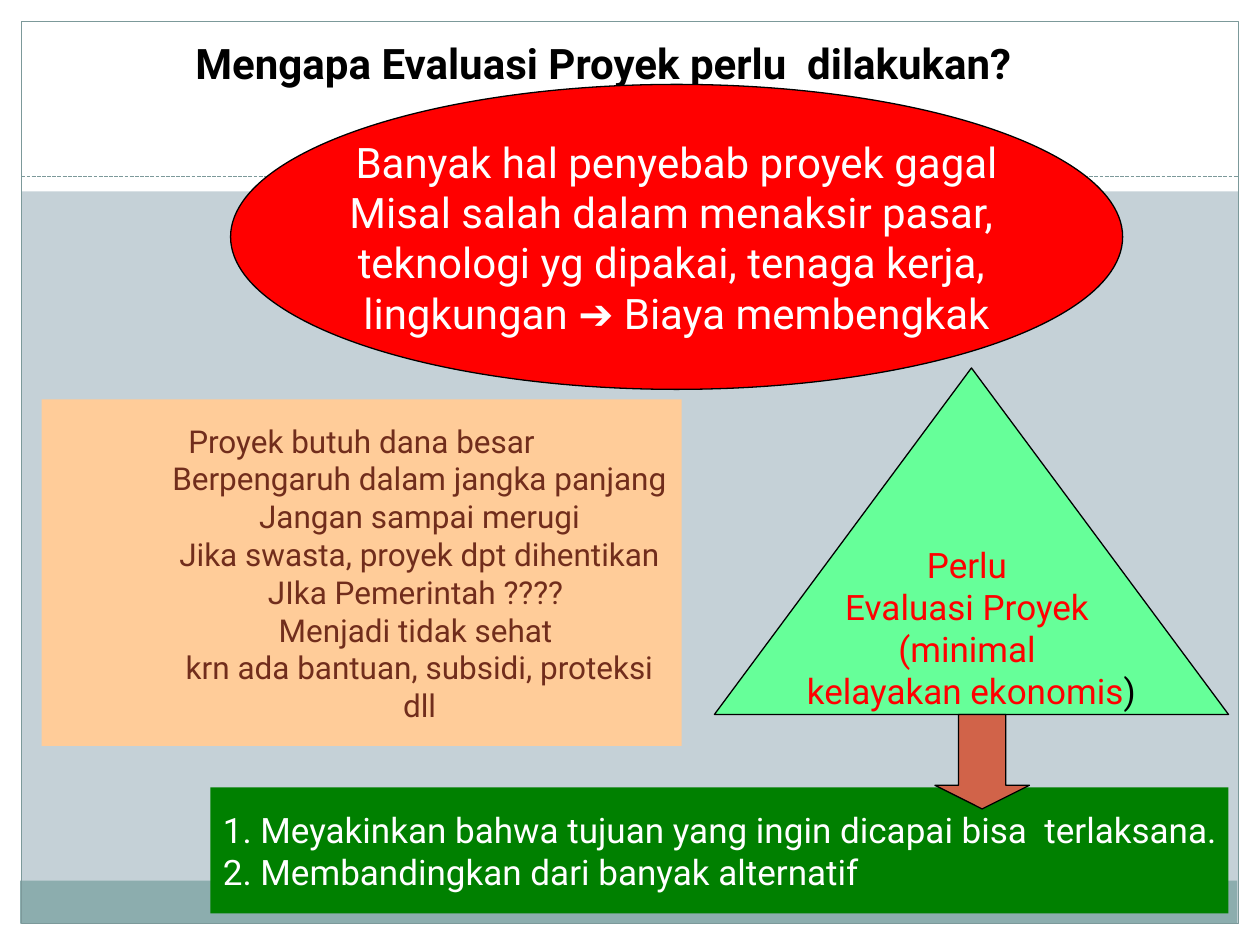
from pptx import Presentation
from pptx.dml.color import RGBColor
from pptx.enum.dml import MSO_LINE
from pptx.enum.shapes import MSO_CONNECTOR, MSO_SHAPE as SHAPE
from pptx.enum.text import MSO_ANCHOR as ANCHOR, PP_ALIGN as ALIGN
from pptx.oxml.ns import qn
from pptx.util import Inches, Pt
from lxml.etree import SubElement

FONT = "Roboto"
WHITE, BLACK, RED, SLATE = "FFFFFF", "000000", "FF0000", "7C999A"


def rgb(color):
    return RGBColor.from_string(color)


def add_shape(s, kind, box, fill=None, line=None):
    sp = s.shapes.add_shape(kind, *map(Inches, box))
    sp.shadow.inherit = False
    if fill:
        sp.fill.solid()
        sp.fill.fore_color.rgb = rgb(fill)
    else:
        sp.fill.background()
    if line:
        sp.line.color.rgb = rgb(line)
        sp.line.width = Pt(0.75)
    else:
        sp.line.fill.background()
    return sp


def add_dashed_line(s, x1, x2, y):
    c = s.shapes.add_connector(MSO_CONNECTOR.STRAIGHT, *map(Inches, (x1, y, x2, y)))
    c.line.color.rgb = rgb(SLATE)
    c.line.width = Pt(0.75)
    c.line.dash_style = MSO_LINE.SQUARE_DOT
    SubElement(c._element.spPr, qn("a:effectLst"))


def set_text(sp, paragraphs, size, color, align=ALIGN.CENTER, wrap=False,
             anchor=ANCHOR.MIDDLE, bold=False, hanging=0):
    tf = sp.text_frame
    tf.word_wrap = wrap
    tf.vertical_anchor = anchor
    for i, text in enumerate(paragraphs):
        p = tf.add_paragraph() if i else tf.paragraphs[0]
        p.text = text
        p.alignment = align
        p.font.name = FONT
        p.font.size = Pt(size)
        p.font.bold = bold
        p.font.color.rgb = rgb(color)
        if hanging:
            pPr = p._p.get_or_add_pPr()
            pPr.set("marL", str(Inches(hanging)))
            pPr.set("indent", str(-Inches(hanging)))
    return tf


def add_frame(s):
    for box in ((0, 7.33, 10, 0.17), (0, 0, 10, 1.52),
                (0, 0, 0.17, 7.5), (9.83, 0, 0.17, 7.5)):
        add_shape(s, SHAPE.RECTANGLE, box, WHITE)
    add_shape(s, SHAPE.RECTANGLE, (0.16, 6.99, 9.66, 0.34), "8CADAE")
    add_shape(s, SHAPE.RECTANGLE, (0.17, 0.17, 9.66, 7.16), line=SLATE)
    add_dashed_line(s, 0.17, 9.83, 1.4)


def add_title(s, text):
    sp = s.shapes.title
    s.shapes._spTree.append(sp._element)
    sp.left, sp.top, sp.width, sp.height = map(Inches, (0.58, 0, 8.5, 0.75))
    set_text(sp, [text], 24, BLACK, wrap=True, anchor=ANCHOR.BOTTOM,
             bold=True, hanging=0.92)


def main():
    prs = Presentation()
    prs.slide_width, prs.slide_height = Inches(10), Inches(7.5)
    s = prs.slides.add_slide(prs.slide_layouts[5])
    s.background.fill.solid()
    s.background.fill.fore_color.rgb = rgb("C5D1D7")
    add_frame(s)
    add_title(s, "Mengapa Evaluasi Proyek perlu  dilakukan? ")

    reasons = add_shape(s, SHAPE.RECTANGLE, (0.33, 3.17, 5.08, 2.75), "FFCC99")
    set_text(reasons, ["Proyek butuh dana besar\n"
                       "Berpengaruh dalam jangka panjang\n"
                       "Jangan sampai merugi\n"
                       "Jika swasta, proyek dpt dihentikan\n"
                       "JIka Pemerintah ???? \n"
                       "Menjadi tidak sehat \n"
                       "krn ada bantuan, subsidi, proteksi dll"],
             18, "712D1C", wrap=True, hanging=0.92)

    causes = add_shape(s, SHAPE.OVAL, (1.83, 0.67, 7.08, 2.42), RED, BLACK)
    set_text(causes, ["Banyak hal penyebab proyek gagal",
                      "Misal salah dalam menaksir pasar, ",
                      "teknologi yg dipakai, tenaga kerja, ",
                      "lingkungan ➔ Biaya membengkak"], 24, WHITE)

    need = add_shape(s, SHAPE.ISOSCELES_TRIANGLE, (5.67, 2.92, 4.08, 2.75),
                     "66FF99", BLACK)
    tf = set_text(need, ["Perlu ", "Evaluasi Proyek ", "(minimal ",
                         "kelayakan ekonomis"], 20, RED)
    r = tf.paragraphs[-1].add_run()
    r.text = ")"
    r.font.color.rgb = rgb(BLACK)

    goals = add_shape(s, SHAPE.RECTANGLE, (1.67, 6.25, 8.08, 1), "008000")
    set_text(goals, ["1. Meyakinkan bahwa tujuan yang ingin dicapai bisa  terlaksana. ",
                     "2. Membandingkan dari banyak alternatif"],
             20, WHITE, align=ALIGN.LEFT)

    arrow = add_shape(s, SHAPE.DOWN_ARROW, (7.42, 5.67, 0.75, 0.75), "D16349", BLACK)
    arrow.adjustments[1] = 0.25
    prs.save("out.pptx")


if __name__ == "__main__":
    main()
